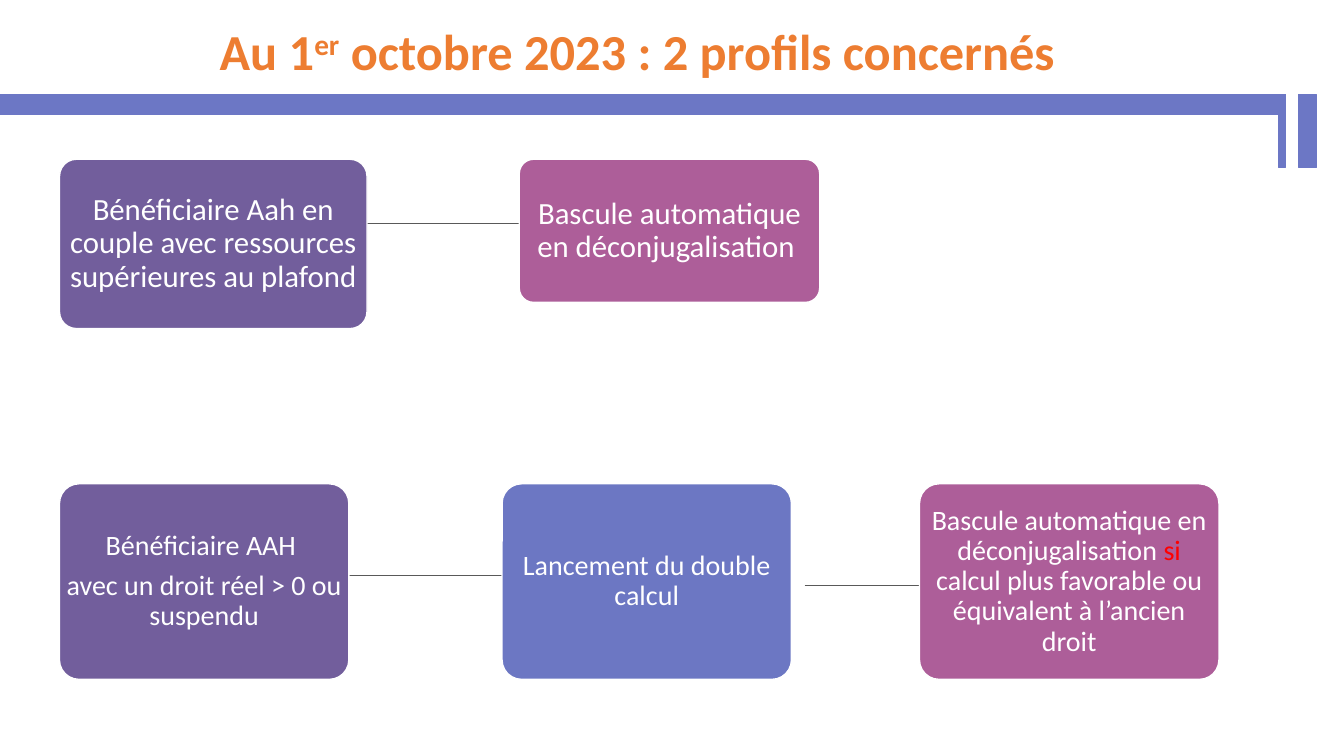
from dataclasses import dataclass

from lxml import etree
from pptx import Presentation
from pptx.dml.color import RGBColor
from pptx.enum.shapes import MSO_CONNECTOR, MSO_SHAPE
from pptx.enum.text import MSO_ANCHOR, PP_ALIGN
from pptx.oxml.ns import qn
from pptx.util import Inches, Pt

RECT = MSO_SHAPE.RECTANGLE
ROUNDED = MSO_SHAPE.ROUNDED_RECTANGLE
STRAIGHT = MSO_CONNECTOR.STRAIGHT
MIDDLE = MSO_ANCHOR.MIDDLE
CENTER = PP_ALIGN.CENTER


@dataclass(frozen=True)
class Theme:
    font: str = "Calibri"
    title: str = "ED7D31"
    band: str = "6C77C5"
    profile: str = "725E9C"
    step: str = "6C77C3"
    outcome: str = "AD5E99"
    text: str = "FFFFFF"
    alert: str = "FF0000"
    link: str = "595959"
    title_size: int = 36
    top_size: int = 22
    bottom_size: int = 20


THEME = Theme()


def rgb(value):
    return RGBColor.from_string(value)


def add_run(p, text, size, color, bold=False):
    r = p.add_run()
    r.text = text
    r.font.name = THEME.font
    r.font.size = Pt(size)
    r.font.bold = bold
    r.font.color.rgb = rgb(color)
    return r


def add_block(s, kind, x, y, w, h, fill, line):
    sp = s.shapes.add_shape(kind, Inches(x), Inches(y), Inches(w), Inches(h))
    sp.shadow.inherit = False
    sp.fill.solid()
    sp.fill.fore_color.rgb = rgb(fill)
    sp.line.color.rgb = rgb(line)
    sp.line.width = Pt(1)
    return sp


def add_header_band(s, x, y, w):
    """Long bar whose right end turns down, followed by a separate tab."""
    bar_h, drop_h, hook_w, tab_w, gap = 0.19, 0.72, 0.07, 0.18, 0.13
    right = x + w
    for left, width, height in ((right - hook_w, hook_w, drop_h),
                                (right + gap, tab_w, drop_h),
                                (x, w, bar_h)):
        add_block(s, RECT, left, y, width, height, THEME.band, THEME.band)


def add_title(s, x, y, w, h):
    sp = s.shapes.add_textbox(Inches(x), Inches(y), Inches(w), Inches(h))
    tf = sp.text_frame
    tf.word_wrap = True
    tf.vertical_anchor = MIDDLE
    p = tf.paragraphs[0]
    p.alignment = CENTER
    p.line_spacing = 0.9
    for text, baseline in (("Au 1", 0), ("er", 30000),
                           (" octobre 2023 : 2 profils concernés ", 0)):
        r = add_run(p, text, THEME.title_size, THEME.title, bold=True)
        if baseline:
            r._r.get_or_add_rPr().set("baseline", str(baseline))


def add_card(s, x, y, w, h, fill, size, paragraphs):
    """Rounded box; each paragraph is a list of (text, colour) runs."""
    sp = add_block(s, ROUNDED, x, y, w, h, fill, THEME.text)
    sp.adjustments[0] = 0.1
    tf = sp.text_frame
    tf.word_wrap = True
    tf.vertical_anchor = MIDDLE
    tf.margin_left = tf.margin_right = tf.margin_top = tf.margin_bottom = 0
    for i, runs in enumerate(paragraphs):
        p = tf.add_paragraph() if i else tf.paragraphs[0]
        p.alignment = CENTER
        p.line_spacing = 0.9
        p.space_after = Pt(size * 0.35)
        for text, color in runs:
            add_run(p, text, size, color)


def add_link(s, x1, x2, y):
    cx = s.shapes.add_connector(STRAIGHT, Inches(x1), Inches(y), Inches(x2), Inches(y))
    cx.line.color.rgb = rgb(THEME.link)
    cx.line.width = Pt(0.5)
    etree.SubElement(cx.element.spPr, qn("a:effectLst"))


def add_couple_profile(s, x, y):
    size, white = THEME.top_size, THEME.text
    add_link(s, x + 3.05, x + 4.56, y + 0.64)
    add_card(s, x, y, 3.05, 1.68, THEME.profile, size,
             [[("Bénéficiaire Aah en couple avec ressources supérieures au plafond", white)]])
    add_card(s, x + 4.56, y, 2.98, 1.42, THEME.outcome, size,
             [[("Bascule automatique en déconjugalisation ", white)]])


def add_entitled_profile(s, x, y):
    size, white, h = THEME.bottom_size, THEME.text, 1.94
    add_link(s, x + 2.87, x + 4.39, y + 0.91)
    add_link(s, x + 7.39, x + 8.53, y + 1.01)
    add_card(s, x, y, 2.87, h, THEME.profile, size,
             [[("Bénéficiaire AAH ", white)],
              [("avec un droit réel > 0 ou suspendu", white)]])
    add_card(s, x + 4.39, y, 2.87, h, THEME.step, size,
             [[("Lancement du double calcul", white)]])
    add_card(s, x + 8.53, y, 2.97, h, THEME.outcome, size,
             [[("Bascule automatique en déconjugalisation ", white),
               ("si", THEME.alert),
               (" calcul plus favorable ou équivalent à l’ancien droit", white)]])


def main():
    prs = Presentation()
    prs.slide_width, prs.slide_height = Inches(13.33), Inches(7.5)
    s = prs.slides.add_slide(prs.slide_layouts[6])
    add_header_band(s, 0, 0.94, 12.75)
    add_title(s, 0, 0.11, 12.76, 0.85)
    add_couple_profile(s, 0.59, 1.58)
    add_entitled_profile(s, 0.59, 4.8)
    prs.save("out.pptx")


if __name__ == "__main__":
    main()
